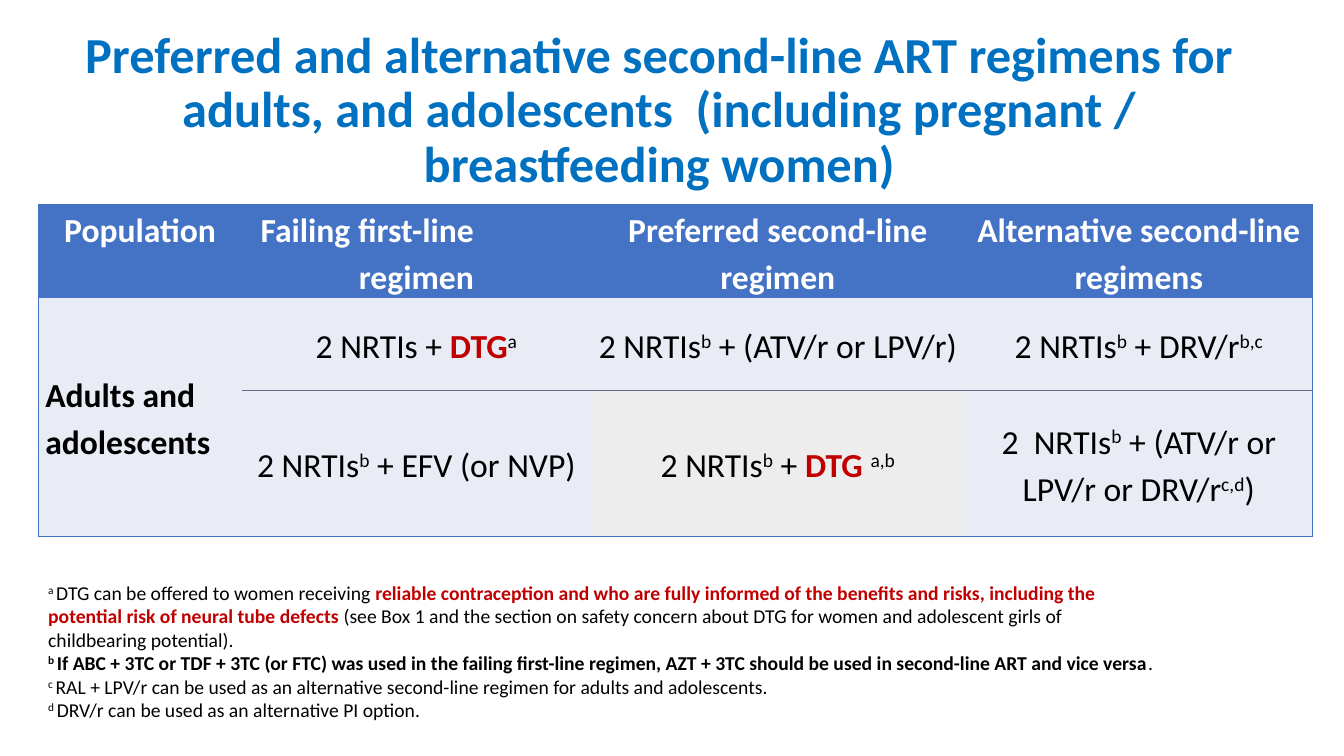
from lxml import etree
from pptx import Presentation
from pptx import util as u
from pptx.dml.color import RGBColor
from pptx.enum import text
from pptx.oxml import ns

BLUE, RED, BLACK, WHITE = "4472C4", "C00000", "000000", "FFFFFF"
PALE, GREY, TITLE, RULE = "E9EBF5", "EDEDED", "0070C0", "5F6B85"
PLAIN_TABLE = "{2D5ABB26-0587-4C30-8999-92F81FD0307C}"
LEFT, CENTER, RIGHT = text.PP_ALIGN.LEFT, text.PP_ALIGN.CENTER, text.PP_ALIGN.RIGHT


def rgb(value):
    return RGBColor.from_string(value)


class Deck:
    font = "Calibri"

    def __init__(self, width, height):
        self.prs = Presentation()
        self.prs.slide_width, self.prs.slide_height = u.Inches(width), u.Inches(height)
        self.s = self.prs.slides.add_slide(self.prs.slide_layouts[6])

    def run(self, p, words, size, color=BLACK, bold=False, raised=False):
        r = p.add_run()
        r.text = words
        r.font.name, r.font.size, r.font.bold = self.font, u.Pt(size), bold
        r.font.color.rgb = rgb(color)
        if raised:
            r.font._element.set("baseline", "30000")

    def text_box(self, box, paragraphs, size, align=LEFT, spacing=None,
                 anchor=text.MSO_ANCHOR.TOP):
        tf = self.s.shapes.add_textbox(*map(u.Inches, box)).text_frame
        tf.word_wrap, tf.vertical_anchor = True, anchor
        for i, runs in enumerate(paragraphs):
            p = tf.add_paragraph() if i else tf.paragraphs[0]
            p.alignment, p.line_spacing = align, spacing
            for words, style in runs:
                self.run(p, words, size, **style)

    def table(self, box, widths, heights):
        frame = self.s.shapes.add_table(len(heights), len(widths), *map(u.Inches, box))
        table = frame.table
        table._tbl.tblPr.find(ns.qn("a:tableStyleId")).text = PLAIN_TABLE
        for column, width in zip(table.columns, widths):
            column.width = u.Inches(width)
        for row, height in zip(table.rows, heights):
            row.height = u.Inches(height)
        return table

    def cell(self, cell, runs, fill, borders, align=CENTER,
             anchor=text.MSO_ANCHOR.MIDDLE, right=0.07):
        cell.margin_left, cell.margin_right = u.Inches(0.07), u.Inches(right)
        cell.margin_top = cell.margin_bottom = 0
        cell.vertical_anchor = anchor
        for side in "LRTB":
            if side in borders:
                self.border(cell, side, *borders[side])
        cell.fill.solid()
        cell.fill.fore_color.rgb = rgb(fill)
        p = cell.text_frame.paragraphs[0]
        p.alignment, p.line_spacing, p.space_after = align, 1.15, u.Pt(10)
        for words, style in runs:
            self.run(p, words, 24, **style)

    def border(self, cell, side, color, width):
        tcPr = cell._tc.get_or_add_tcPr()
        ln = etree.SubElement(tcPr, ns.qn(f"a:ln{side}"), w=str(u.Pt(width)))
        fill = etree.SubElement(ln, ns.qn("a:solidFill"))
        etree.SubElement(fill, ns.qn("a:srgbClr"), val=color)


PLAIN, SUP, BOLD = {}, {"raised": True}, {"bold": True}
HOT, HEAD = {"color": RED, "bold": True}, {"color": WHITE, "bold": True}
NRTI = [("2 NRTIs", PLAIN), ("b", SUP)]

HEADERS = ["Population", "Failing first-line regimen",
           "Preferred second-line regimen", "Alternative second-line regimens"]
ROWS = [
    [[(words, HEAD)] for words in HEADERS],
    [[("Adults and adolescents", BOLD)],
     [("2 NRTIs + ", PLAIN), ("DTG", HOT), ("a", SUP)],
     NRTI + [(" + (ATV/r or LPV/r)", PLAIN)],
     NRTI + [(" + DRV/r", PLAIN), ("b,c", SUP)]],
    [[],
     NRTI + [(" + EFV (or NVP)", PLAIN)],
     NRTI + [(" + ", PLAIN), ("DTG ", HOT), ("a,b", SUP)],
     [("2  NRTIs", PLAIN), ("b", SUP), (" + (ATV/r or LPV/r or DRV/r", PLAIN),
      ("c,d", SUP), (")", PLAIN)]],
]
NOTES = [
    [("a ", SUP), ("DTG can be offered to women receiving ", PLAIN),
     ("reliable contraception and who are fully informed of the benefits and risks, "
      "including the potential risk of neural tube defects ", HOT),
     ("(see Box 1 and the section on safety concern about DTG for women and "
      "adolescent girls of childbearing potential).", PLAIN)],
    [("b ", {**SUP, **BOLD}),
     ("If ABC + 3TC or TDF + 3TC (or FTC) was used in the failing first-line regimen, "
      "AZT + 3TC should be used in second-line ART and vice versa", BOLD), (".", PLAIN)],
    [("c ", SUP), ("RAL + LPV/r can be used as an alternative second-line regimen "
                   "for adults and adolescents.", PLAIN)],
    [("d ", SUP), ("DRV/r can be used as an alternative PI option.", PLAIN)],
]


def add_regimens(deck):
    table = deck.table((0.38, 2.03, 12.64, 3.29), (2.02, 3.46, 3.71, 3.45),
                       (0.92, 0.92, 1.45))
    table.cell(1, 0).merge(table.cell(2, 0))
    edge = (BLUE, 1)
    for i, row in enumerate(ROWS):
        for j, runs in enumerate(row):
            borders = {"T": edge, "B": edge}
            if j == 0:
                borders["L"] = edge
            elif i:
                borders["B" if i == 1 else "T"] = (RULE, 0.5)
            if j == 3:
                borders["R"] = edge
            fill = BLUE if i == 0 else GREY if (i, j) == (2, 2) else PALE
            options = {}
            if i == 0:
                options["anchor"] = text.MSO_ANCHOR.TOP
                if j == 1:
                    options.update(align=RIGHT, right=1.16)
            elif j == 0:
                options["align"] = LEFT
            deck.cell(table.cell(i, j), runs, fill, borders, **options)


def main():
    deck = Deck(13.33, 7.5)
    title = ("Preferred and alternative second-line ART regimens for adults, and "
             "adolescents  (including pregnant / breastfeeding women)")
    deck.text_box((0.26, 0.26, 12.56, 1.69), [[(title, {"color": TITLE, "bold": True})]],
                  36, CENTER, 0.9, text.MSO_ANCHOR.MIDDLE)
    add_regimens(deck)
    deck.text_box((0.38, 5.71, 11.23, 1.51), NOTES, 14)
    deck.prs.save("out.pptx")


if __name__ == "__main__":
    main()
